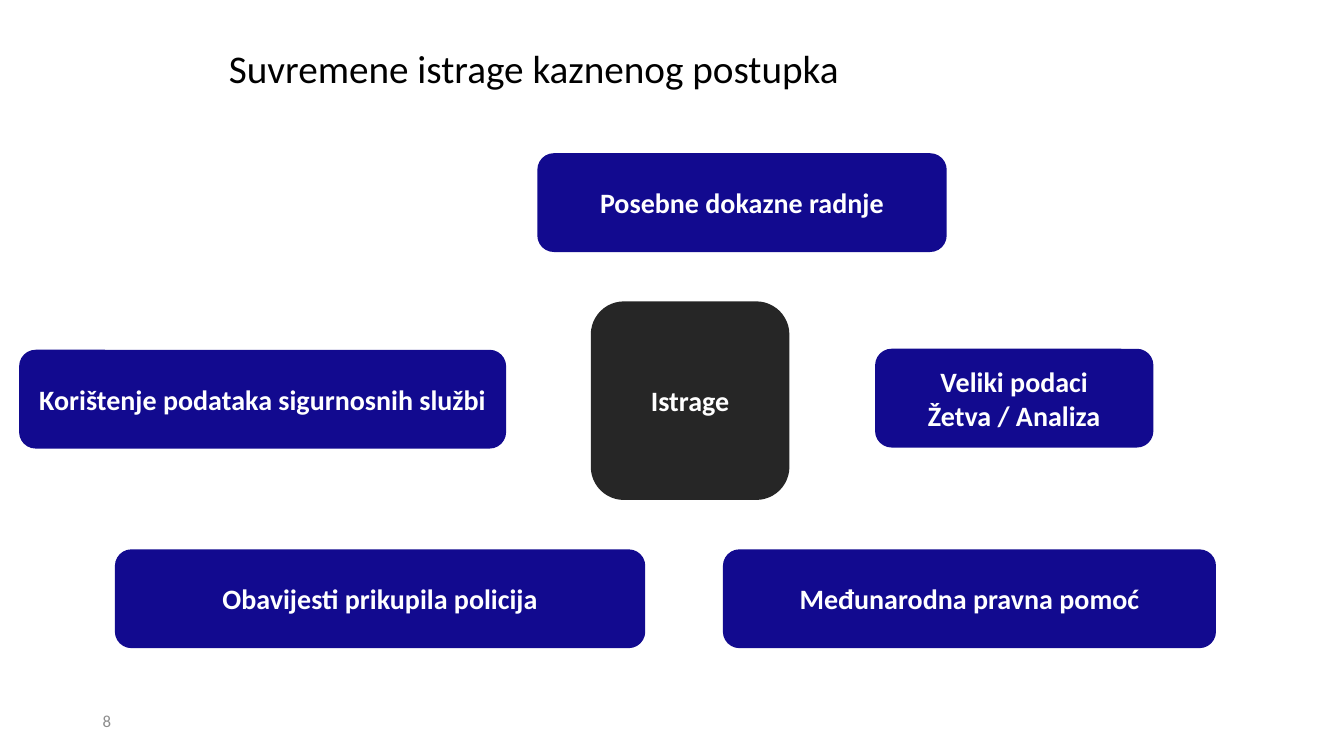
"""Builds the slide on modern criminal investigations: a hub and its five sources."""
from dataclasses import dataclass

from pptx import Presentation
from pptx.dml.color import RGBColor
from pptx.enum.shapes import MSO_SHAPE as Preset
from pptx.enum.text import MSO_ANCHOR as Anchor, PP_ALIGN as Align
from pptx.slide import Slide
from pptx.text.text import TextFrame
from pptx.util import Inches, Pt


@dataclass(frozen=True)
class Theme:
    font: str = "Calibri"
    navy: str = "120A8F"
    charcoal: str = "262626"
    white: str = "FFFFFF"
    black: str = "000000"
    grey: str = "8C8C8C"
    title_size: int = 28
    box_size: int = 20
    number_size: int = 12


@dataclass(frozen=True)
class Box:
    lines: tuple[str, ...]
    left: float
    top: float
    width: float
    height: float = 0.98
    fill: str = Theme.navy


THEME = Theme()
BOXES = (
    Box(("Posebne dokazne radnje",), 5.33, 1.52, 4.06),
    Box(("Korištenje podataka sigurnosnih službi",), 0.19, 3.47, 4.83),
    Box(("Veliki podaci", "Žetva / Analiza"), 8.68, 3.46, 2.76),
    Box(("Obavijesti prikupila policija",), 1.14, 5.45, 5.26),
    Box(("Međunarodna pravna pomoć",), 7.17, 5.45, 4.89),
    Box(("Istrage",), 5.86, 2.99, 1.97, 1.97, THEME.charcoal),
)


def write(frame: TextFrame, lines: tuple[str, ...], size: int, color: str,
          align: Align = Align.LEFT, bold: bool = False, wrap: bool = True,
          spacing: float = 1.0) -> None:
    frame.word_wrap = wrap
    frame.vertical_anchor = Anchor.MIDDLE
    font_format = {"name": THEME.font, "size": Pt(size), "bold": bold}
    for index, line in enumerate(lines):
        paragraph = frame.add_paragraph() if index else frame.paragraphs[0]
        paragraph.alignment = align
        paragraph.line_spacing = spacing
        run = paragraph.add_run()
        run.text = line
        for attribute, value in font_format.items():
            setattr(run.font, attribute, value)
        run.font.color.rgb = RGBColor.from_string(color)


def add_title(slide: Slide, wording: str) -> None:
    title = slide.shapes.title
    place = {"left": 2.17, "top": 0.33, "width": 6.55, "height": 0.75}
    for attribute, value in place.items():
        setattr(title, attribute, Inches(value))
    write(title.text_frame, (wording,), THEME.title_size, THEME.black, spacing=0.9)


def add_box(slide: Slide, box: Box) -> None:
    place = map(Inches, (box.left, box.top, box.width, box.height))
    panel = slide.shapes.add_shape(Preset.ROUNDED_RECTANGLE, *place)
    panel.shadow.inherit = False
    panel.fill.solid()
    panel.fill.fore_color.rgb = RGBColor.from_string(box.fill)
    panel.line.fill.background()
    write(panel.text_frame, box.lines, THEME.box_size, THEME.white,
          Align.CENTER, bold=True, wrap=False)


def add_page_number(slide: Slide, number: str) -> None:
    place = map(Inches, (0.92, 6.95, 3, 0.4))
    footer = slide.shapes.add_textbox(*place)
    write(footer.text_frame, (number,), THEME.number_size, THEME.grey)


def main() -> None:
    deck = Presentation()
    deck.slide_width, deck.slide_height = Inches(13.33), Inches(7.5)
    slide = deck.slides.add_slide(deck.slide_layouts[5])
    add_title(slide, "Suvremene istrage kaznenog postupka")
    for box in BOXES:
        add_box(slide, box)
    add_page_number(slide, "8")
    deck.save("out.pptx")


if __name__ == "__main__":
    main()
